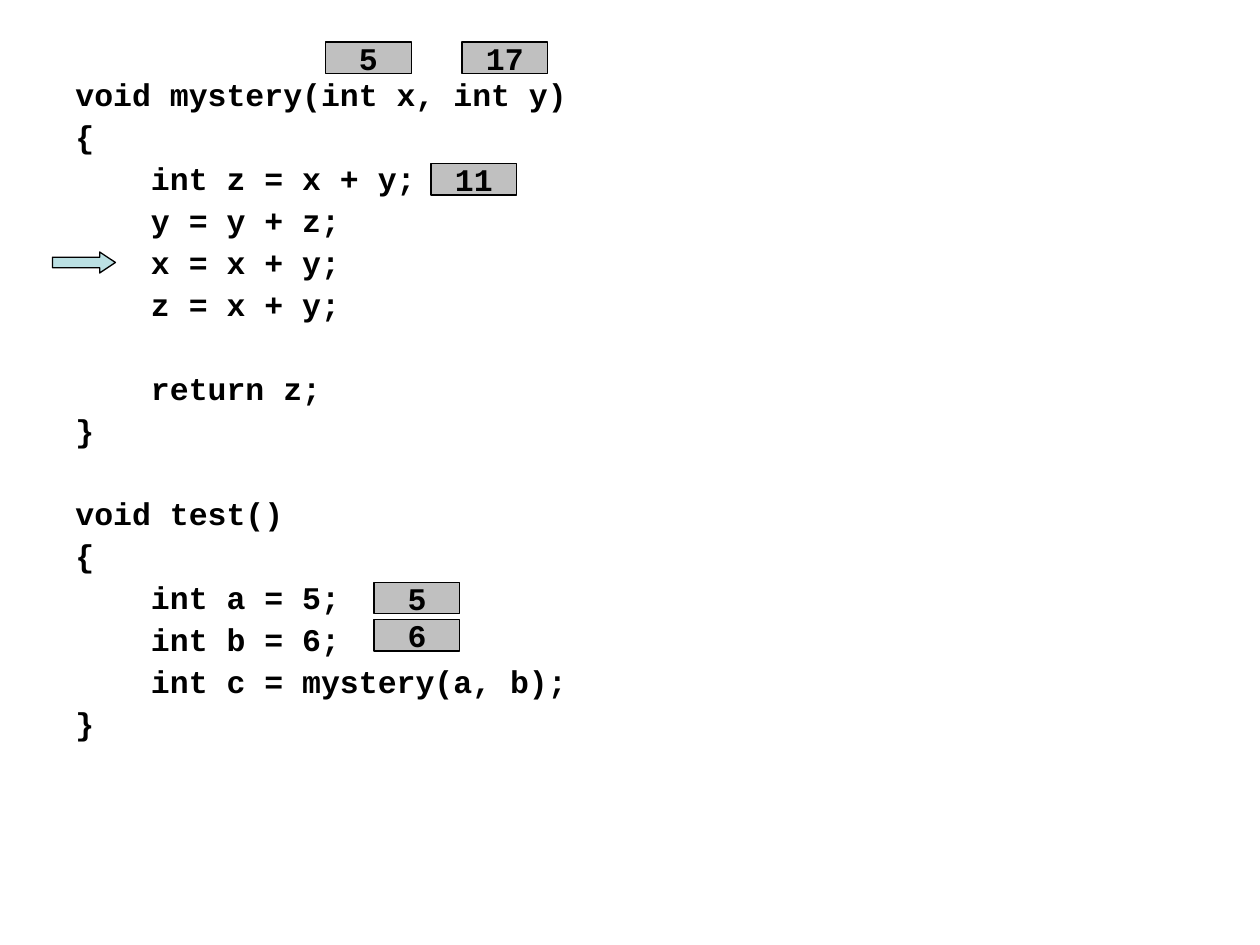
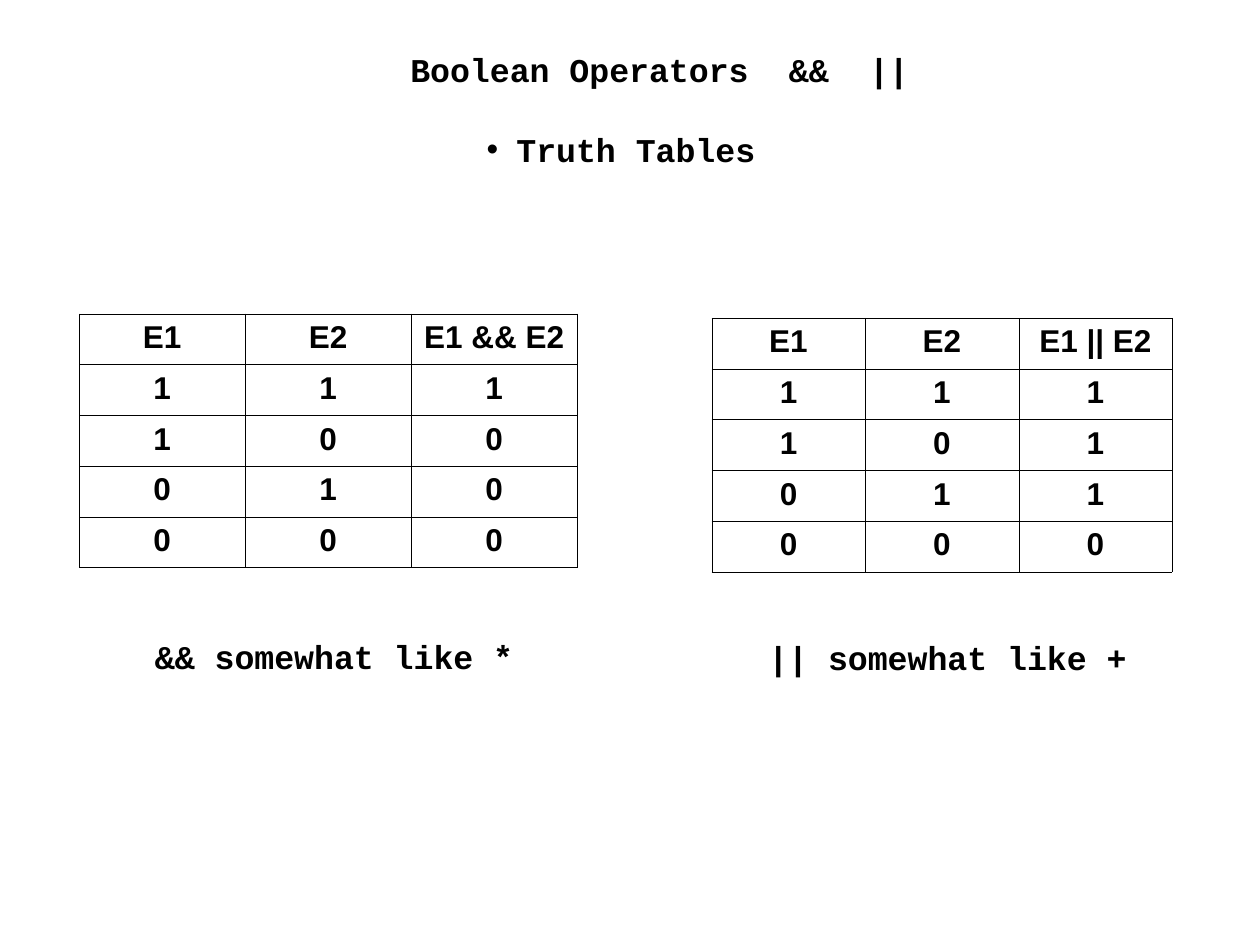
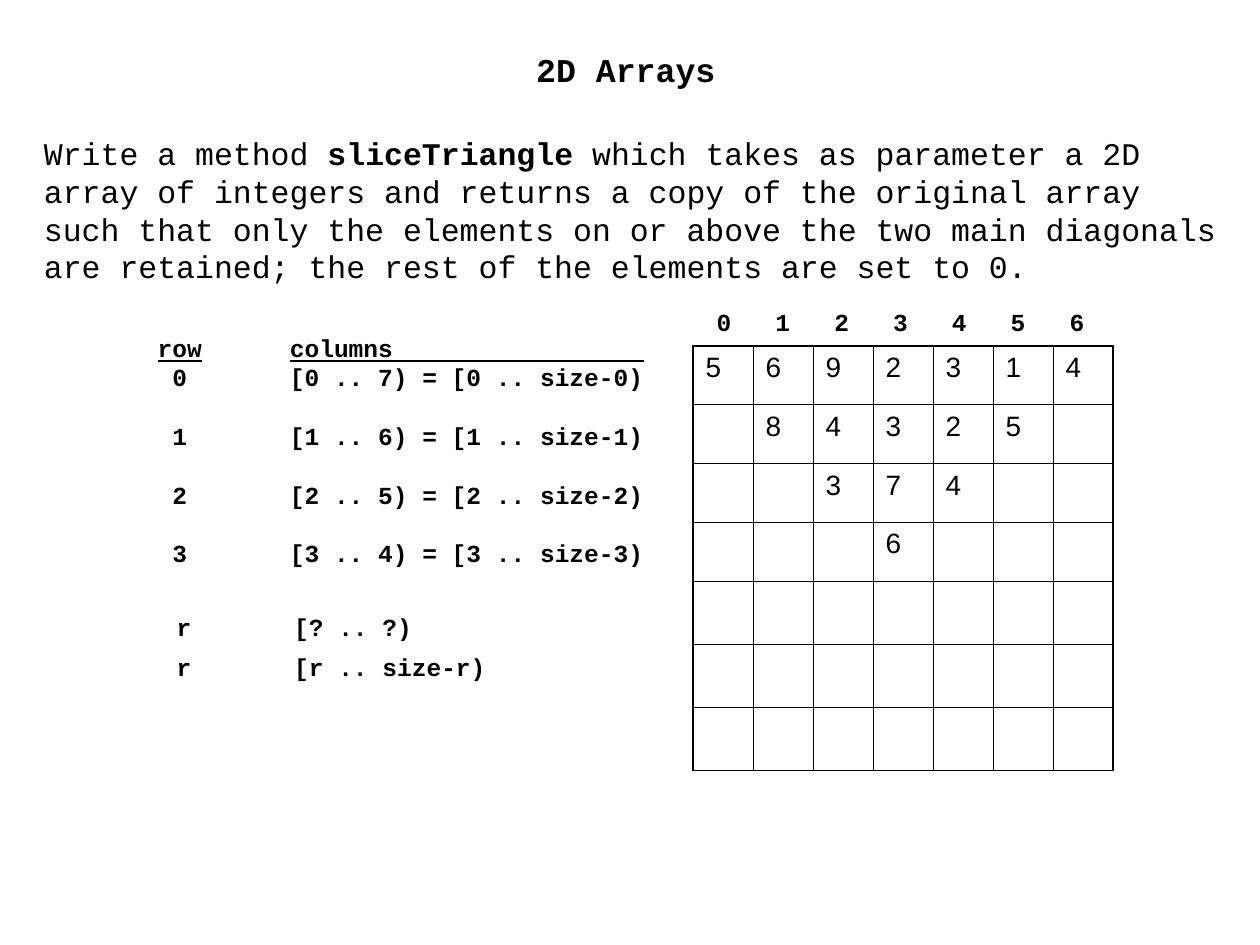
"""Build three lecture slides: a code trace, truth tables and a 2D array exercise."""
from dataclasses import dataclass

from lxml.etree import SubElement
from pptx import Presentation
from pptx.dml.color import RGBColor as Rgb
from pptx.enum.shapes import MSO_CONNECTOR as Connector, MSO_SHAPE as Preset
from pptx.enum.text import MSO_ANCHOR as Anchor, PP_ALIGN as Align
from pptx.oxml import parse_xml
from pptx.oxml.ns import nsdecls, qn
from pptx.util import Pt


@dataclass(frozen=True)
class Theme:
    ink: Rgb = Rgb(0x00, 0x00, 0x00)
    paper: Rgb = Rgb(0xFF, 0xFF, 0xFF)
    value: Rgb = Rgb(0xC0, 0xC0, 0xC0)
    arrow: Rgb = Rgb(0xBB, 0xE0, 0xE3)
    mono: str = "Courier New"
    sans: str = "Arial"
    title: float = 19
    body: float = 18
    cell: float = 16
    small: float = 14
    title_top: float = 24.5
    outline: float = 0.75
    underline: float = 1
    hairline: float = 0.06
    thin: float = 0.45
    thick: float = 1.08


theme = Theme()


def write(frame, paras, size, bold=True, font=theme.mono, tabs=()):
    """Fill a text frame with (spans, format) pairs; spans is text or (text, font values) pairs."""
    frame.word_wrap = True
    for index, (spans, layout) in enumerate(paras):
        para = frame.paragraphs[0] if index == 0 else frame.add_paragraph()
        layout = {"alignment": Align.LEFT, **layout}
        props = para._p.get_or_add_pPr()
        for name in ("marL", "indent"):
            if name in layout:
                props.set(name, str(Pt(layout.pop(name))))
        bullet = layout.pop("bullet", None)
        for name, value in layout.items():
            setattr(para, name, value)
        if bullet:
            SubElement(props, qn("a:buFont"), typeface=theme.sans)
            SubElement(props, qn("a:buChar"), char=bullet)
        if tabs:
            stops = SubElement(props, qn("a:tabLst"))
            for stop in tabs:
                SubElement(stops, qn("a:tab"), pos=str(Pt(stop)), algn="l")
        for text, extra in [(spans, {})] if isinstance(spans, str) else spans:
            span = para.add_run()
            span.text = text
            look = {"name": font, "size": Pt(size), "bold": bold, **extra}
            for name, value in look.items():
                setattr(span.font, name, value)
            span.font.color.rgb = theme.ink


def add_grid(page, rows, place, widths, heights, edge, inner, fill=None, layout=None, **look):
    """Add a table with its own outer and inner rules."""
    size = sum(widths), sum(heights)
    table = page.shapes.add_table(len(rows), len(widths), *map(Pt, place + size)).table
    table.first_row = table.horz_banding = False
    for column, width in zip(table.columns, widths):
        column.width = Pt(width)
    for r, (row, height) in enumerate(zip(rows, heights)):
        table.rows[r].height = Pt(height)
        for c, text in enumerate(row):
            cell = table.cell(r, c)
            if fill is None:
                cell.fill.background()
            else:
                cell.fill.solid()
                cell.fill.fore_color.rgb = fill
            outer = {"L": c == 0, "R": c == len(widths) - 1, "T": r == 0, "B": r == len(rows) - 1}
            for position, (side, is_edge) in enumerate(outer.items()):
                weight = Pt(edge if is_edge else inner)
                rule = parse_xml(
                    f'<a:ln{side} {nsdecls("a")} w="{weight}"><a:solidFill>'
                    f'<a:srgbClr val="{theme.ink}"/></a:solidFill></a:ln{side}>')
                cell._tc.get_or_add_tcPr().insert(position, rule)
            if text:
                write(cell.text_frame, [(text, layout or {})], font=theme.sans, **look)


deck = Presentation()
deck.slide_width, deck.slide_height = Pt(720), Pt(540)
trace, truth, arrays = [deck.slides.add_slide(deck.slide_layouts[6]) for _ in range(3)]

code = [
    (0, "void mystery(int x, int y)"),
    (0, "{"),
    (1, "int z = x + y;"),
    (1, "y = y + z;"),
    (1, "x = x + y;"),
    (1, "z = x + y;"),
    (1, "return z;"),
    (0, "}"),
    (0, "void test()"),
    (0, "{"),
    (1, "int a = 5;"),
    (1, "int b = 6;"),
    (1, "int c = mystery(a, b);"),
    (0, "}"),
]
after_gap = {"return z;", "void test()"}
lines = [(text, {"marL": 36 + 43.2 * depth, "indent": 0, "line_spacing": 0.9,
                 "space_before": Pt(28.4 if text in after_gap else 4.5)})
         for depth, text in code]
box = trace.shapes.add_textbox(Pt(0), Pt(42), Pt(720), Pt(498))
write(box.text_frame, lines, theme.body)

pointer = trace.shapes.add_shape(Preset.RIGHT_ARROW, Pt(30), Pt(144), Pt(36), Pt(12))
pointer.adjustments[0], pointer.adjustments[1] = 0.5, 0.75
values = [("5", 213.75, 332.75), ("6", 213.75, 354), ("5", 186, 24), ("17", 264, 24),
          ("11", 246.25, 93.5)]
filled = [(pointer, theme.arrow)]
for text, left, top in values:
    box = trace.shapes.add_shape(Preset.RECTANGLE, Pt(left), Pt(top), Pt(49), Pt(18))
    box.text_frame.vertical_anchor = Anchor.MIDDLE
    write(box.text_frame, [(text, {"alignment": Align.CENTER})], theme.body)
    filled.append((box, theme.value))
for shape, color in filled:
    shape.shadow.inherit = False
    shape.fill.solid()
    shape.fill.fore_color.rgb = color
    shape.line.color.rgb = theme.ink
    shape.line.width = Pt(theme.outline)

heading = [
    (" Boolean Operators\t&&\t||", {}),
    ("Truth Tables", {"marL": 72, "indent": -17, "bullet": "•", "space_before": Pt(22.8)}),
]
blocks = [(truth, heading, (216, theme.title_top, 312, 75.5), theme.title, True, (227.75, 273.5))]

operators = [
    ("&&", "*", "1000", (45.25, 179.25), 94.9, (81.5, 360)),
    ("||", "+", "1110", (406.75, 181.75), 87.7, (432, 360.75)),
]
for operator, like, results, place, width, caption in operators:
    rows = [("E1", "E2", f"E1 {operator} E2")]
    rows += [tuple(inputs + result) for inputs, result in zip(("11", "10", "01", "00"), results)]
    add_grid(truth, rows, place, (width,) * 3, (29,) * 5, theme.hairline, theme.hairline,
             theme.paper, {"alignment": Align.CENTER}, size=theme.body)
    blocks.append((truth, [(f"{operator} somewhat like {like}", {})], caption + (221, 53),
                   theme.title, True, ()))

task = [
    ([("Write a method ", {}), ("sliceTriangle", {"bold": True}),
      (" which takes as parameter a 2D", {})], {}),
    ("array of integers and returns a copy of the original array", {}),
    ("such that only the elements on or above the two main diagonals", {}),
    ("are retained; the rest of the elements are set to 0.", {}),
]
underlined = {"underline": True}
ranges = [([("row", underlined), ("\t", {}), ("columns", underlined)], {})]
ranges += [(f" {row}\t[{row} .. {7 - row}) = [{row} .. size-{row})",
            {"space_before": Pt(16.8 if row else 0)}) for row in range(4)]
indices = "\t".join(str(column) for column in range(7))
blocks += [
    (arrays, [(" 2D Arrays", {})], (288, theme.title_top, 130, 30), theme.title, True, ()),
    (arrays, task, (18, 73, 723.5, 115), theme.body, False, ()),
    (arrays, ranges, (83, 186.5, 354, 142), theme.small, True, (75.6,)),
    (arrays, [(indices, {})], (402.5, 172, 236, 24.5), theme.small, True,
     [33.6 * n for n in range(1, 7)]),
]
for top, answer in ((342, "[? .. ?)"), (365, "[r .. size-r)")):
    rule = [(" ", {"size": Pt(theme.body)}), (f"r\t{answer}", {})]
    blocks.append((arrays, [(rule, {})], (83, top, 348, 29), theme.small, True, (78,)))

for page, paras, (left, top, width, height), size, bold, tabs in blocks:
    outline = page.shapes.build_freeform(Pt(left), Pt(top))
    corners = [(left + width, top), (left + width, top + height), (left, top + height)]
    outline.add_line_segments([(Pt(x), Pt(y)) for x, y in corners], close=True)
    box = outline.convert_to_shape()
    box.shadow.inherit = False
    box.fill.background()
    box.line.fill.background()
    box.text_frame.vertical_anchor = Anchor.TOP
    write(box.text_frame, paras, size, bold, tabs=tabs)

header_rule = arrays.shapes.add_connector(Connector.STRAIGHT, Pt(224), Pt(206.25), Pt(368), Pt(206.25))
header_rule.line.color.rgb = theme.ink
header_rule.line.width = Pt(theme.underline)
SubElement(header_rule._element.spPr, qn("a:effectLst"))

kept = ["5692314", "84325", "374", "6", "", "", ""]
rows = [[digit.strip() for digit in digits.center(7)] for digits in kept]
add_grid(arrays, rows, (396, 197.6), (34.3,) * 7, (33.65,) * 4 + (36,) * 3, theme.thick, theme.thin,
         layout={"space_before": Pt(4)}, size=theme.cell, bold=False)

deck.save("out.pptx")
